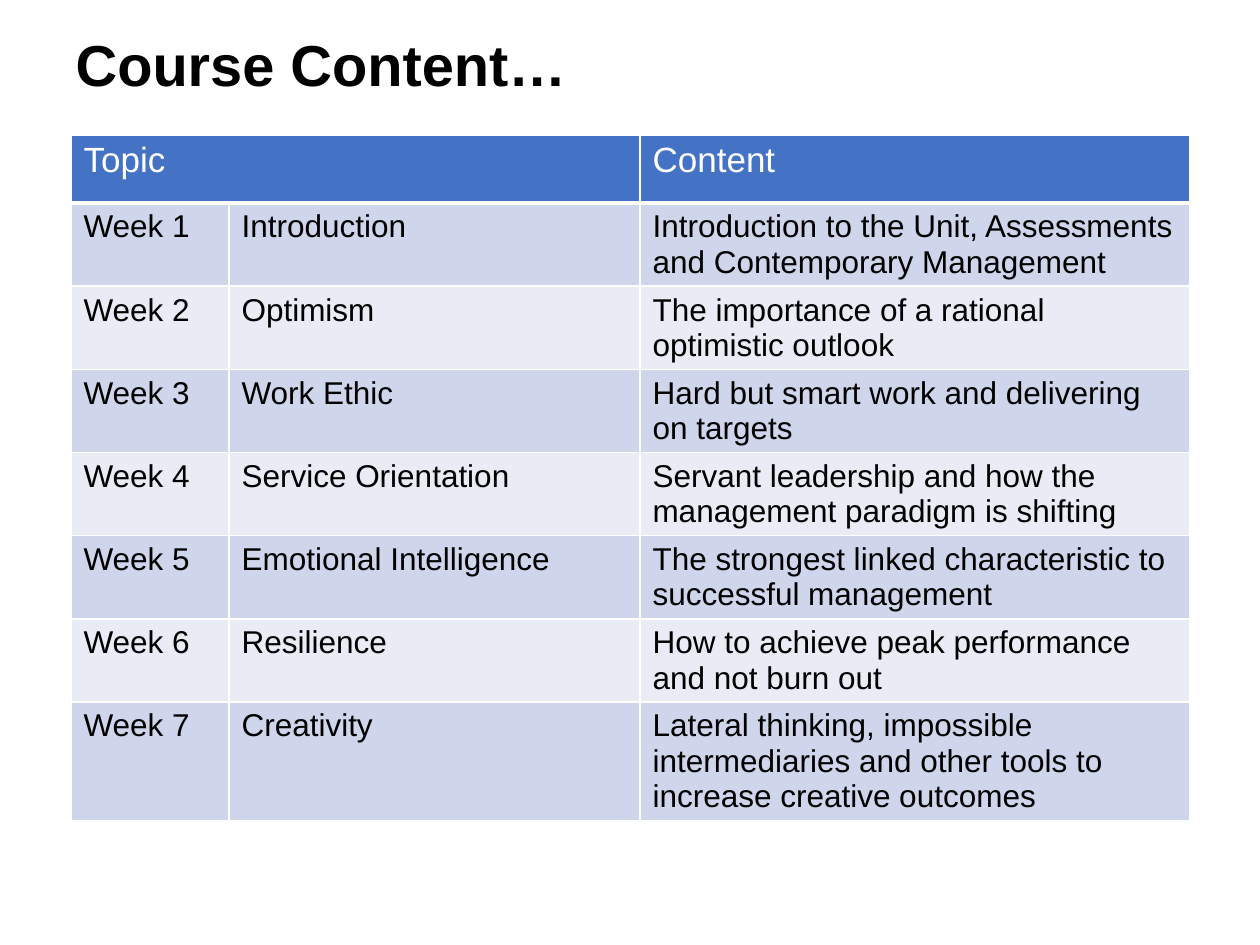
from lxml.etree import SubElement
from pptx import Presentation
from pptx.dml.color import RGBColor
from pptx.enum.text import MSO_ANCHOR, PP_ALIGN
from pptx.oxml.ns import qn
from pptx.util import Emu, Pt

PX = 914400 // 126
FONT = "Arial"
BLACK = RGBColor(0x00, 0x00, 0x00)
WHITE = RGBColor(0xFF, 0xFF, 0xFF)
HEADER_BLUE = RGBColor(0x44, 0x72, 0xC4)
BANDS = [RGBColor(0xCF, 0xD5, 0xEA), RGBColor(0xE9, 0xEB, 0xF5)]

COLUMN_WIDTHS = [158, 411, 550]
HEADER_HEIGHT, WEEK_HEIGHT = 68, 52
WEEKS = [
    ("Introduction", "Introduction to the Unit, Assessments and Contemporary Management"),
    ("Optimism", "The importance of a rational optimistic outlook"),
    ("Work Ethic", "Hard but smart work and delivering on targets"),
    ("Service Orientation", "Servant leadership and how the management paradigm is shifting"),
    ("Emotional Intelligence", "The strongest linked characteristic to successful management"),
    ("Resilience", "How to achieve peak performance and not burn out"),
    ("Creativity", "Lateral thinking, impossible intermediaries and other tools to "
                   "increase creative outcomes"),
]


def px(length):
    return Emu(length * PX)


def add_run(paragraph, text, size, color, bold=False):
    run = paragraph.add_run()
    run.text = text
    font = run.font
    font.name, font.size, font.bold = FONT, Pt(size), bold
    font.color.rgb = color


def set_borders(cell, bottom):
    properties = cell._tc.get_or_add_tcPr()
    for side, width in (("L", 1), ("R", 1), ("T", 1), ("B", bottom)):
        line = SubElement(properties, qn(f"a:ln{side}"), w=str(Pt(width)))
        fill = SubElement(line, qn("a:solidFill"))
        SubElement(fill, qn("a:srgbClr"), val=str(WHITE))


def fill_cell(cell, text, size, color, background, bottom=1):
    set_borders(cell, bottom)
    cell.fill.solid()
    cell.fill.fore_color.rgb = background
    if text:
        add_run(cell.text_frame.paragraphs[0], text, size, color)


def add_title(slide, left, top, width, height):
    title = slide.shapes.title
    title.left, title.top, title.width, title.height = map(px, (left, top, width, height))
    frame = title.text_frame
    frame.word_wrap = True
    frame.vertical_anchor = MSO_ANCHOR.MIDDLE
    heading = frame.paragraphs[0]
    heading.alignment = PP_ALIGN.LEFT
    heading.line_spacing = 0.9
    add_run(heading, "Course Content…", 33, BLACK, bold=True)


def add_schedule(slide, left, top, width, height):
    frame = slide.shapes.add_table(len(WEEKS) + 1, len(COLUMN_WIDTHS),
                                   *map(px, (left, top, width, height)))
    schedule = frame.table
    for column, column_width in zip(schedule.columns, COLUMN_WIDTHS):
        column.width = px(column_width)
    for index, row in enumerate(schedule.rows):
        row.height = px(WEEK_HEIGHT if index else HEADER_HEIGHT)
    frame.height = px(height)

    # Header, with the topic spanning week and name
    for cell, text in zip(schedule.rows[0].cells, ("Topic", "", "Content")):
        fill_cell(cell, text, 20, WHITE, HEADER_BLUE, bottom=3)
    schedule.cell(0, 0).merge(schedule.cell(0, 1))

    # One banded row for each week
    for week, (topic, content) in enumerate(WEEKS, start=1):
        band = BANDS[(week - 1) % 2]
        for cell, text in zip(schedule.rows[week].cells, (f"Week {week}", topic, content)):
            fill_cell(cell, text, 18, BLACK, band)


def main():
    deck = Presentation()
    deck.slide_width, deck.slide_height = px(1260), px(945)
    slide = deck.slides.add_slide(deck.slide_layouts[5])
    slide.background.fill.solid()
    slide.background.fill.fore_color.rgb = WHITE
    add_title(slide, 63, 1, 1135, 134)
    add_schedule(slide, 71, 135, sum(COLUMN_WIDTHS), 723)
    deck.save("out.pptx")


if __name__ == "__main__":
    main()
